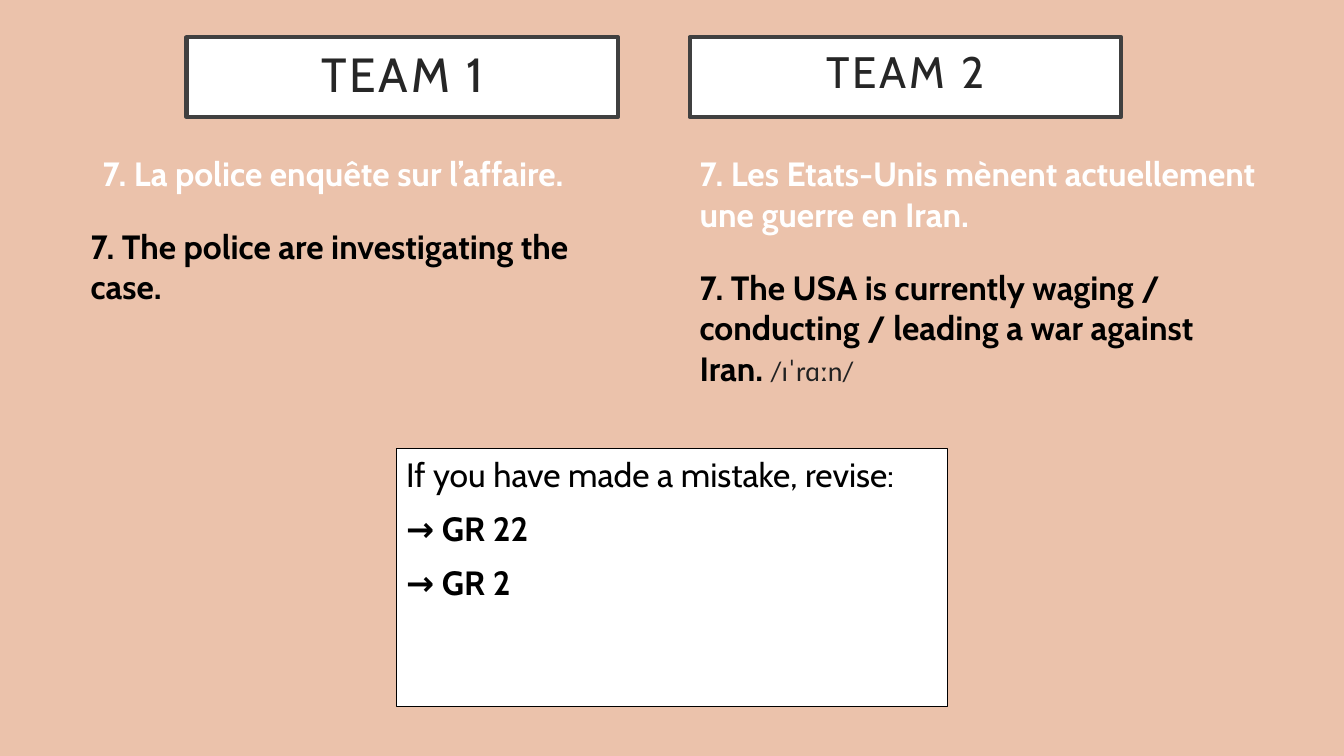
from dataclasses import dataclass, field

from pptx import Presentation
from pptx.dml.color import RGBColor
from pptx.enum.shapes import MSO_SHAPE
from pptx.enum.text import MSO_ANCHOR, MSO_AUTO_SIZE, PP_ALIGN
from pptx.util import Inches, Pt

WHITE, BLACK = "FFFFFF", "000000"
PEACH, CHARCOAL, INK, PHONETIC_GREY = "EBC2AB", "404040", "262626", "222222"
TEAM_TOP, TEAM_WIDTH, TEAM_HEIGHT = 0.37, 4.28, 0.79
RIGHT_COLUMN = 6.84


@dataclass
class Span:
    text: str
    size: float = 24
    color: str = BLACK
    bold: bool = True
    font: str = "Cabin"
    tracking: float = 0


@dataclass
class Box:
    left: float
    top: float
    width: float
    height: float
    paras: list[list[Span]]
    outline: tuple[str, float] | None = None
    frame: dict = field(default_factory=dict)
    para: dict = field(default_factory=dict)


def rgb(color: str) -> RGBColor:
    return RGBColor.from_string(color)


def apply(target, values: dict) -> None:
    for name, value in values.items():
        setattr(target, name, value)


def write_span(para, span: Span) -> None:
    run = para.add_run()
    run.text = span.text
    apply(run.font, {"size": Pt(span.size), "bold": span.bold, "name": span.font})
    run.font.color.rgb = rgb(span.color)
    if span.tracking:
        run.font._element.set("spc", str(int(span.tracking * 100)))


def write_text(shape, box: Box) -> None:
    frame = shape.text_frame
    apply(frame, {
        "word_wrap": True,
        "auto_size": MSO_AUTO_SIZE.NONE,
        "vertical_anchor": MSO_ANCHOR.TOP,
    } | box.frame)
    for index, spans in enumerate(box.paras):
        para = frame.add_paragraph() if index else frame.paragraphs[0]
        space = {"space_before": Pt(10)} if index else {}
        apply(para, {"alignment": PP_ALIGN.LEFT} | space | box.para)
        for span in spans:
            write_span(para, span)


def draw_box(page, box: Box, shape=None) -> None:
    place = [Inches(n) for n in (box.left, box.top, box.width, box.height)]
    if shape is not None:
        apply(shape, dict(zip(("left", "top", "width", "height"), place)))
    elif box.outline:
        shape = page.shapes.add_shape(MSO_SHAPE.RECTANGLE, *place)
        shape.shadow.inherit = False
    else:
        shape = page.shapes.add_textbox(*place)
    if box.outline:
        color, weight = box.outline
        shape.fill.solid()
        shape.fill.fore_color.rgb = rgb(WHITE)
        shape.line.color.rgb = rgb(color)
        shape.line.width = Pt(weight)
    write_text(shape, box)


def team_box(left: float, name: str, size: float, spacing: float) -> Box:
    span = Span(name, size, INK, False, tracking=2)
    frame = {
        "vertical_anchor": MSO_ANCHOR.MIDDLE,
        "margin_left": Inches(0.3),
        "margin_right": Inches(0.3),
        "margin_top": Inches(0.2),
        "margin_bottom": Inches(0.2),
    }
    para = {"alignment": PP_ALIGN.CENTER, "line_spacing": spacing}
    return Box(left, TEAM_TOP, TEAM_WIDTH, TEAM_HEIGHT, [[span]], (CHARCOAL, 3), frame, para)


TEAM_ONE = team_box(1.85, "TEAM 1", 34.2, 0.9)
BOXES = [
    Box(0.8, 2.19, 5.47, 2.81, [[Span("7. The police are investigating the case.")]]),
    team_box(RIGHT_COLUMN, "TEAM 2", 31.4, 0.7),
    Box(RIGHT_COLUMN, 2.6, 5.35, 1.43, [[
        Span("7. The USA is currently waging / conducting / leading a war against Iran. "),
        Span("/ɪˈrɑːn/", 20, PHONETIC_GREY, False, "Calibri"),
    ]]),
    Box(3.93, 4.45, 5.47, 2.56, [
        [Span("If you have made a mistake, revise:", bold=False)],
        [Span("→ GR 22")],
        [Span("→ GR 2")],
    ], (BLACK, 1)),
    Box(0.92, 1.47, 5.57, 1.43, [[Span("7. La police enquête sur l’affaire.", color=WHITE)]]),
    Box(RIGHT_COLUMN, 1.47, 5.92, 1, [[
        Span("7. Les Etats-Unis mènent actuellement une guerre en Iran.", color=WHITE),
    ]]),
]


def main() -> None:
    deck = Presentation()
    apply(deck, {"slide_width": Inches(13.33), "slide_height": Inches(7.5)})
    page = deck.slides.add_slide(deck.slide_layouts.get_by_name("Title Only"))
    page.background.fill.solid()
    page.background.fill.fore_color.rgb = rgb(PEACH)
    draw_box(page, TEAM_ONE, page.shapes.title)
    for box in BOXES:
        draw_box(page, box)
    deck.save("out.pptx")


if __name__ == "__main__":
    main()
